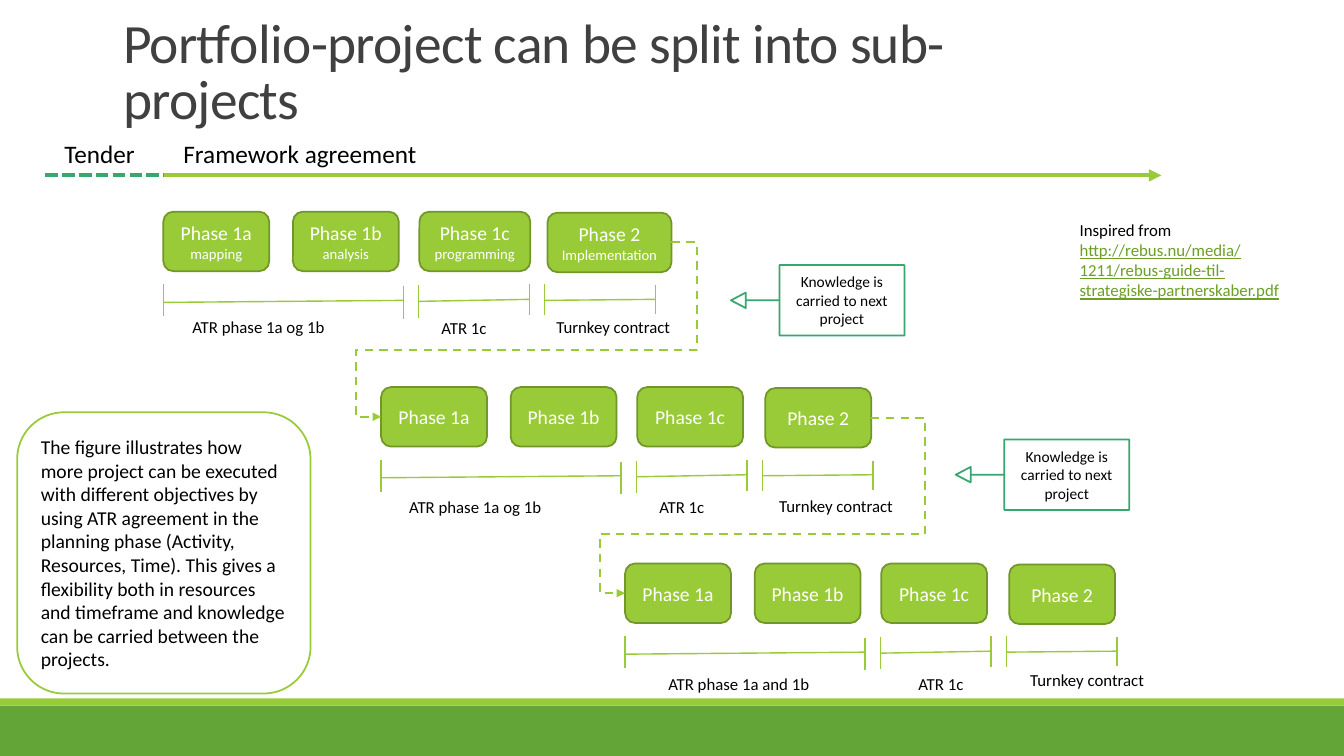
from dataclasses import dataclass

from lxml.etree import SubElement
from pptx import Presentation
from pptx.dml.color import RGBColor
from pptx.enum.dml import MSO_LINE as Dash
from pptx.enum.shapes import MSO_CONNECTOR as Link, MSO_SHAPE as Kind
from pptx.enum.text import MSO_ANCHOR as Anchor, MSO_AUTO_SIZE as Fit, PP_ALIGN as Align
from pptx.oxml.ns import qn
from pptx.util import Inches, Length, Pt


@dataclass(frozen=True)
class Theme:
    font: str = "Calibri"
    lime: str = "99CB38"
    olive: str = "719629"
    green: str = "63A537"
    teal: str = "37A76F"
    link: str = "6B9F25"
    grey: str = "404040"
    black: str = "000000"
    white: str = "FFFFFF"
    title: float = 39.6
    heading: float = 18
    body: float = 14
    label: float = 12
    callout: float = 11
    detail: float = 10.5


@dataclass(frozen=True)
class Phase:
    name: str
    detail: str = ""
    width: float = 10.5


@dataclass(frozen=True)
class Label:
    text: str
    column: float
    row: float
    width: float = 20.4


@dataclass(frozen=True)
class Lane:
    column: float
    row: float
    phases: tuple[Phase, ...]
    labels: tuple[Label, ...]


@dataclass(frozen=True)
class Bracket:
    """Offsets from the lane's corner; each tick is (top, bottom)."""
    start: float
    end: float
    rows: tuple[float, float]
    left_tick: tuple[float, float]
    right_tick: tuple[float, float]


THEME = Theme()
COLUMNS, ROWS = 133.3, 75
WIDTH, HEIGHT = Inches(13.33), Inches(7.5)

PHASE_COLUMNS = (0, 12.85, 25.4, 38.1)
PHASE_DROPS = (0, 0, 0, 0.1)
PHASE_HEIGHT = 5.9
PLAIN_PHASES = tuple(Phase(f"Phase {number}") for number in ("1a", "1b", "1c", "2"))
BRACKETS = (
    Bracket(0, 23.8, (9, 8.8), (7.2, 10.4), (7.4, 10.6)),
    Bracket(25.3, 36.3, (8.9, 8.7), (7.3, 10.5), (7.2, 10.3)),
    Bracket(37.8, 48.8, (8.8, 8.7), (7.2, 10.3), (7.3, 10.2)),
)
LANES = (
    Lane(16.2, 21,
         (Phase("Phase 1a", "mapping"), Phase("Phase 1b", "analysis"),
          Phase("Phase 1c", "programming", 11), Phase("Phase 2", "Implementation", 12.3)),
         (Label("ATR phase 1a og 1b", 1.9, 9.9), Label("ATR 1c", 26.6, 10, 9.5),
          Label("Turnkey contract", 38, 9.9))),
    Lane(37.8, 38.4, PLAIN_PHASES,
         (Label("ATR phase 1a og 1b", 1.8, 10.4), Label("ATR 1c", 26.6, 10.4, 9.5),
          Label("Turnkey contract", 38.5, 10.3))),
    Lane(62, 55.9, PLAIN_PHASES,
         (Label("ATR phase 1a and 1b", 3.3, 10.4), Label("ATR 1c", 28.1, 10.4, 9.5),
          Label("Turnkey contract", 39.2, 10.1))),
)
LANE_BENDS = ((-8700, 61700, 108700), (-22000, 66400, 110200))
CALLOUTS = ((72.5, 26.3), (94.8, 43.6))


def cols(count: float) -> Length:
    return Length(round(WIDTH * count / COLUMNS))


def rows(count: float) -> Length:
    return Length(round(HEIGHT * count / ROWS))


def area(column: float, row: float, width: float, height: float) -> tuple[Length, ...]:
    return cols(column), rows(row), cols(width), rows(height)


def rgb(colour: str) -> RGBColor:
    return RGBColor.from_string(colour)


def write(para, text: str, *, size: float, colour: str = THEME.black,
          underline: bool = False, spacing: int = 0) -> None:
    span = para.add_run()
    span.text = text
    font = span.font
    font.name, font.size, font.color.rgb = THEME.font, Pt(size), rgb(colour)
    if underline:
        font.underline = True
    if spacing:
        font._element.set("spc", str(spacing))


def add_box(page, kind, place: tuple[Length, ...], fill: str, line: str = ""):
    box = page.shapes.add_shape(kind, *place)
    box.shadow.inherit = False
    box.fill.solid()
    box.fill.fore_color.rgb = rgb(fill)
    if line:
        box.line.color.rgb = rgb(line)
        box.line.width = Pt(1.25)
    else:
        box.line.fill.background()
    box.text_frame.word_wrap = True
    box.text_frame.vertical_anchor = Anchor.MIDDLE
    return box


def add_label(page, text: str, place: tuple[Length, ...], size: float):
    frame = page.shapes.add_textbox(*place).text_frame
    frame.word_wrap = True
    frame.auto_size = Fit.SHAPE_TO_FIT_TEXT
    write(frame.paragraphs[0], text, size=size)
    return frame


def add_line(page, start: tuple[float, float], end: tuple[float, float], *,
             kind=Link.STRAIGHT, colour: str = THEME.lime, width: float = 1,
             dash=None, arrow: bool = False):
    line = page.shapes.add_connector(kind, cols(start[0]), rows(start[1]),
                                     cols(end[0]), rows(end[1]))
    line.line.color.rgb = rgb(colour)
    line.line.width = Pt(width)
    if dash:
        line.line.dash_style = dash
    properties = line._element.spPr
    if arrow:
        SubElement(properties.find(qn("a:ln")), qn("a:tailEnd"), type="triangle")
    SubElement(properties, qn("a:effectLst"))
    return line


def add_lane(page, lane: Lane) -> list:
    boxes = []
    for phase, column, drop in zip(lane.phases, PHASE_COLUMNS, PHASE_DROPS):
        place = area(lane.column + column, lane.row + drop, phase.width, PHASE_HEIGHT)
        box = add_box(page, Kind.ROUNDED_RECTANGLE, place, THEME.lime, THEME.olive)
        para = box.text_frame.paragraphs[0]
        para.alignment = Align.CENTER
        name = f"{phase.name} " if phase.detail else phase.name
        write(para, name, size=THEME.body, colour=THEME.white)
        if phase.detail:
            write(para, phase.detail, size=THEME.detail, colour=THEME.white)
        boxes.append(box)
    for bracket in BRACKETS:
        left, right = lane.column + bracket.start, lane.column + bracket.end
        first, last = (lane.row + row for row in bracket.rows)
        add_line(page, (left, first), (right, last))
        for column, tick in ((left, bracket.left_tick), (right, bracket.right_tick)):
            add_line(page, (column, lane.row + tick[0]), (column, lane.row + tick[1]))
    for label in lane.labels:
        place = area(lane.column + label.column, lane.row + label.row, label.width, 3)
        add_label(page, label.text, place, THEME.label)
    return boxes


def join_lanes(page, source, target, bends: tuple[int, ...]) -> None:
    line = add_line(page, (80, 40), (40, 60), kind=Link.ELBOW, width=1.5,
                    dash=Dash.DASH, arrow=True)
    line.begin_connect(source, 3)
    line.end_connect(target, 1)
    outline = line._element.spPr.find(qn("a:prstGeom"))
    outline.set("prst", "bentConnector5")
    guides = outline.find(qn("a:avLst"))
    for number, bend in enumerate(bends, 1):
        SubElement(guides, qn("a:gd"), name=f"adj{number}", fmla=f"val {bend}")


def main() -> None:
    deck = Presentation()
    deck.slide_width, deck.slide_height = WIDTH, HEIGHT
    page = deck.slides.add_slide(deck.slide_layouts[5])

    # Footer bands and title
    add_box(page, Kind.RECTANGLE, area(0, 70, COLUMNS, 5), THEME.green)
    add_box(page, Kind.RECTANGLE, area(0, 69.3, COLUMNS, 0.7), THEME.lime)
    title = page.shapes.title
    title.left, title.top, title.width, title.height = area(11.2, 1, 100.8, 12.5)
    frame = title.text_frame
    frame.word_wrap, frame.auto_size = True, Fit.NONE
    frame.vertical_anchor = Anchor.BOTTOM
    para = frame.paragraphs[0]
    para.alignment, para.line_spacing = Align.LEFT, 0.85
    write(para, "Portfolio-project can be split into sub-projects",
          size=THEME.title, colour=THEME.grey, spacing=-50)

    # Sub-project lanes and the links between them
    lanes = [add_lane(page, lane) for lane in LANES]
    for source, target, bends in zip(lanes, lanes[1:], LANE_BENDS):
        join_lanes(page, source[-1], target[0], bends)

    # Knowledge callouts
    for column, row in CALLOUTS:
        callout = add_box(page, Kind.LEFT_ARROW_CALLOUT, area(column, row, 17.2, 7),
                          THEME.white, THEME.teal)
        for index, share in enumerate((0, 0.11, 0.21, 0.72)):
            callout.adjustments[index] = share
        para = callout.text_frame.paragraphs[0]
        para.alignment = Align.CENTER
        write(para, "Knowledge is carried to next project", size=THEME.callout)

    # Timeline
    add_line(page, (16.2, 17.4), (115.2, 17.4), width=3, arrow=True)
    add_line(page, (4.5, 17.4), (16.2, 17.4), colour=THEME.teal, width=3,
             dash=Dash.SQUARE_DOT)
    add_label(page, "Tender", area(5.4, 13.2, 9.5, 4), THEME.heading)
    add_label(page, "Framework agreement", area(17.2, 13.2, 56.9, 4), THEME.heading)

    # Explanation and source
    note = add_box(page, Kind.ROUNDED_RECTANGLE, area(1.7, 40.9, 29.1, 27.9),
                   THEME.white, THEME.lime)
    para = note.text_frame.paragraphs[0]
    para.alignment = Align.LEFT
    write(para, "The figure illustrates how more project can be executed with different "
          "objectives by using ATR agreement in the planning phase (Activity, Resources, "
          "Time). This gives a flexibility both in resources and timeframe and knowledge "
          "can be carried between the projects.", size=THEME.body)
    credit = add_label(page, "Inspired from", area(106.1, 21.3, 22.3, 9.1), THEME.label)
    write(credit.add_paragraph(),
          "http://rebus.nu/media/1211/rebus-guide-til-strategiske-partnerskaber.pdf",
          size=THEME.label, colour=THEME.link, underline=True)

    deck.save("out.pptx")


if __name__ == "__main__":
    main()
